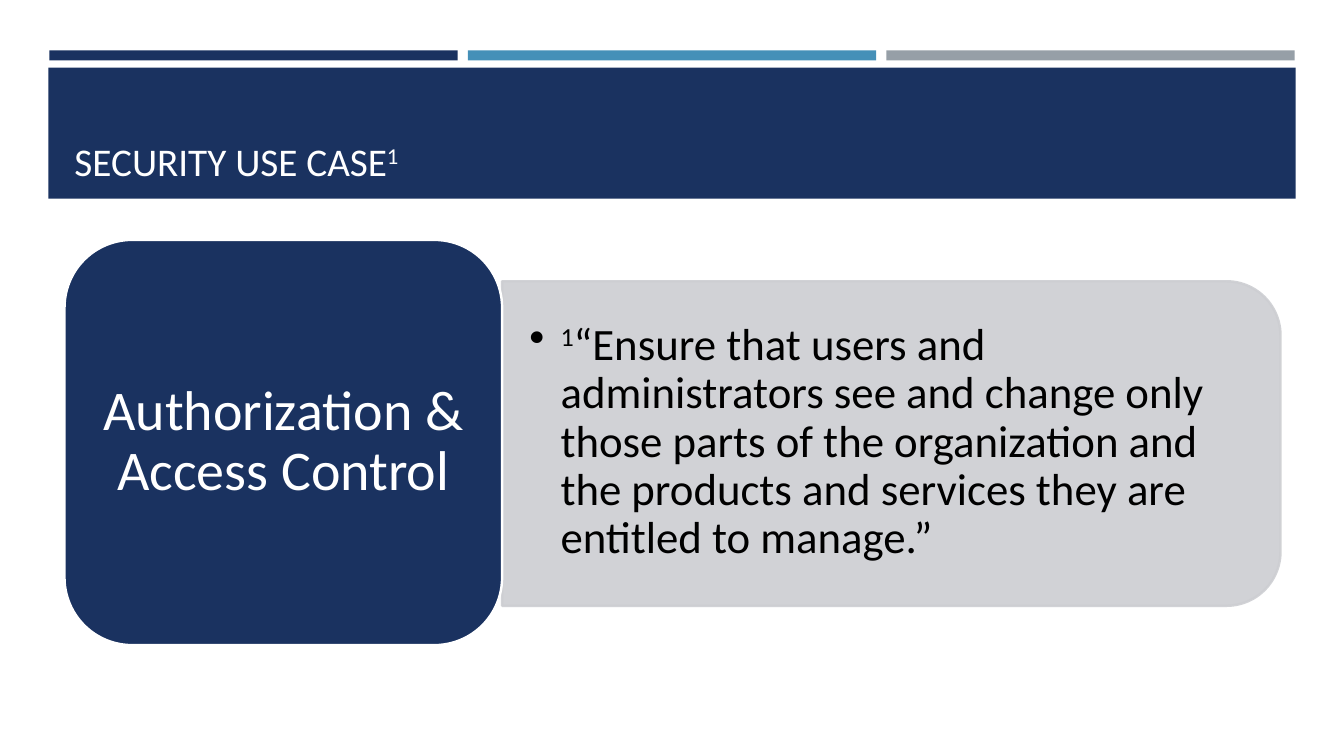
from dataclasses import dataclass

from lxml.etree import SubElement
from pptx import Presentation
from pptx.dml.color import RGBColor
from pptx.enum.shapes import MSO_SHAPE
from pptx.enum.text import MSO_ANCHOR, PP_ALIGN
from pptx.oxml.ns import qn
from pptx.util import Inches, Pt


@dataclass(frozen=True)
class Theme:
    font: str = "Calibri"
    navy: str = "1A3260"
    blue: str = "4590B8"
    gray: str = "969FA7"
    panel: str = "CDCED2"
    white: str = "FFFFFF"
    black: str = "000000"
    title: int = 28
    quote: int = 32
    topic: int = 40
    outline: float = 1.75


THEME = Theme()


def add_block(s, kind, box, fill, line=None):
    sp = s.shapes.add_shape(kind, *map(Inches, box))
    sp.shadow.inherit = False
    sp.fill.solid()
    sp.fill.fore_color.rgb = RGBColor.from_string(fill)
    if line:
        sp.line.color.rgb = RGBColor.from_string(line)
        sp.line.width = Pt(THEME.outline)
    else:
        sp.line.fill.background()
    return sp


def set_frame(tf, anchor, inset_x, inset_y):
    settings = {
        "word_wrap": True, "vertical_anchor": anchor,
        "margin_left": Inches(inset_x), "margin_right": Inches(inset_x),
        "margin_top": Inches(inset_y), "margin_bottom": Inches(inset_y),
    }
    for name, value in settings.items():
        setattr(tf, name, value)
    return tf.paragraphs[0]


def add_run(p, text, size, color, superscript=False):
    r = p.add_run()
    r.text = text
    for name, value in {"name": THEME.font, "size": Pt(size)}.items():
        setattr(r.font, name, value)
    r.font.color.rgb = RGBColor.from_string(color)
    if superscript:
        r.font._element.set("baseline", "30000")


def set_alpha(color_format, percent):
    for color in color_format.iter(qn("a:srgbClr")):
        SubElement(color, qn("a:alpha"), val=str(percent * 1000))


def add_bullet(p, indent):
    pPr = p._p.get_or_add_pPr()
    pPr.set("marL", str(Inches(indent)))
    pPr.set("indent", str(-Inches(indent)))
    SubElement(pPr, qn("a:buChar"), char="•")


def add_accent_bars(s, left, top, width, height):
    gap = 0.1
    colors = (THEME.navy, THEME.blue, THEME.gray)
    bar = (width - gap * (len(colors) - 1)) / len(colors)
    for i, color in enumerate(colors):
        add_block(s, MSO_SHAPE.RECTANGLE,
                  (left + i * (bar + gap), top, bar, height), color)


def add_title_band(s, left, top, width, height):
    add_block(s, MSO_SHAPE.RECTANGLE, (left, top, width, height), THEME.navy)
    box = (left + 0.16, top + 0.1, width - 0.31, height - 0.19)
    tf = s.shapes.add_textbox(*map(Inches, box)).text_frame
    p = set_frame(tf, MSO_ANCHOR.BOTTOM, 0.1, 0.05)
    add_run(p, "SECURITY USE CASE", THEME.title, THEME.white)
    add_run(p, "1", THEME.title, THEME.white, superscript=True)


def add_quote_panel(s, left, top, width, height):
    # A quarter turn puts the two round corners on the right
    turned = (left + (width - height) / 2, top + (height - width) / 2,
              height, width)
    sp = add_block(s, MSO_SHAPE.ROUND_2_SAME_RECTANGLE, turned,
                   THEME.panel, THEME.panel)
    sp.rotation = 90
    set_alpha(sp._element.spPr, 90)

    # The quotation stays upright in its own text box
    box = (left, top + 0.15, width - 0.16, height - 0.32)
    tf = s.shapes.add_textbox(*map(Inches, box)).text_frame
    p = set_frame(tf, MSO_ANCHOR.MIDDLE, 0.27, 0.14)
    p.line_spacing = 0.9
    add_bullet(p, 0.31)
    add_run(p, "1", THEME.quote, THEME.black, superscript=True)
    add_run(p, "“Ensure that users and administrators see and change only "
               "those parts of the organization and the products and services "
               "they are entitled to manage.”", THEME.quote, THEME.black)


def add_topic_card(s, left, top, width, height):
    sp = add_block(s, MSO_SHAPE.ROUNDED_RECTANGLE, (left, top, width, height),
                   THEME.navy, THEME.white)
    p = set_frame(sp.text_frame, MSO_ANCHOR.MIDDLE, 0.17, 0.08)
    p.alignment = PP_ALIGN.CENTER
    p.line_spacing = 0.9
    add_run(p, "Authorization & Access Control", THEME.topic, THEME.white)


def main():
    prs = Presentation()
    prs.slide_width, prs.slide_height = Inches(13.33), Inches(7.5)
    s = prs.slides.add_slide(prs.slide_layouts[6])
    add_accent_bars(s, 0.49, 0.5, 12.35, 0.1)
    add_title_band(s, 0.48, 0.67, 12.37, 1.3)
    add_quote_panel(s, 4.98, 2.79, 7.72, 3.22)
    add_topic_card(s, 0.64, 2.38, 4.34, 4.02)
    prs.save("out.pptx")


if __name__ == "__main__":
    main()
